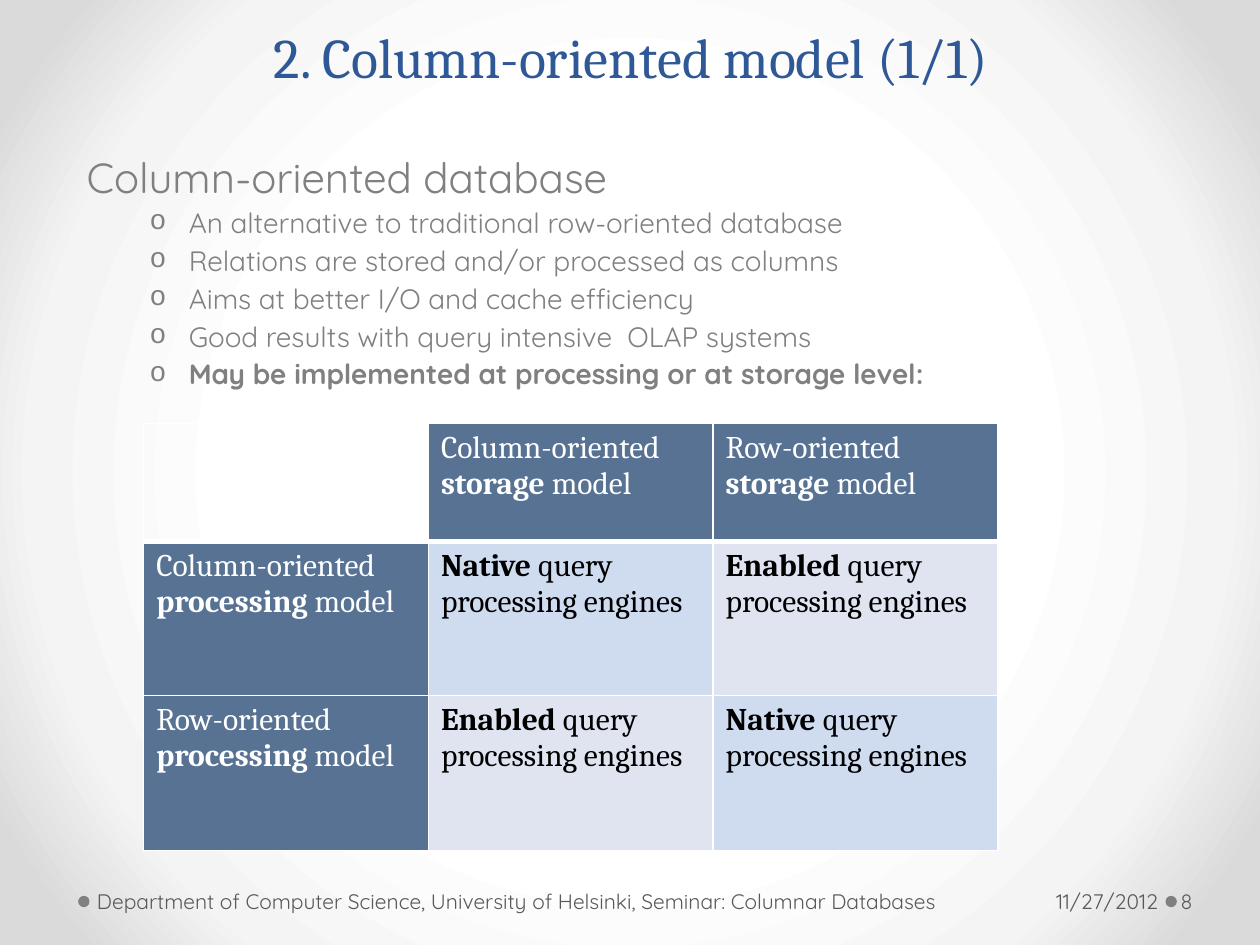
import pptx
import pptx.dml.color
import pptx.enum.shapes
import pptx.enum.text
import pptx.oxml
import pptx.oxml.ns
import pptx.util
from dataclasses import dataclass
from lxml import etree

Inches = pptx.util.Inches
Pt = pptx.util.Pt
Align = pptx.enum.text.PP_ALIGN
Anchor = pptx.enum.text.MSO_ANCHOR
qn = pptx.oxml.ns.qn


@dataclass
class Theme:
    serif: str = "Cambria"
    sans: str = "Quicksand"
    bullet_font: str = "Courier New"
    title: str = "2F5897"
    body: str = "808080"
    footer: str = "595959"
    white: str = "FFFFFF"
    black: str = "000000"
    header: str = "577293"
    native: str = "CFDCF0"
    enabled: str = "DFE4F0"
    backdrop: tuple = ((50, "FFFFFF"), (76, "F4F4F4"), (92, "DADADA"))
    title_size: int = 32
    heading_size: int = 24
    table_size: int = 18
    bullet_size: int = 16
    footer_size: int = 12


def rgb(color):
    return pptx.dml.color.RGBColor.from_string(color)


def add_xml(parent, tag, **attributes):
    return etree.SubElement(parent, qn(tag), **attributes)


class SlideBuilder:
    def __init__(self, page, theme):
        self.page = page
        self.theme = theme

    def background(self):
        self.page.background.fill.gradient()
        gradient = self.page.element.find(".//" + qn("a:gradFill"))
        for child in list(gradient):
            gradient.remove(child)
        stops = add_xml(gradient, "a:gsLst")
        for position, color in self.theme.backdrop:
            stop = add_xml(stops, "a:gs", pos=str(position * 1000))
            add_xml(stop, "a:srgbClr", val=color)
        circle = add_xml(gradient, "a:path", path="circle")
        add_xml(circle, "a:fillToRect", l="50000", t="50000", r="50000", b="50000")

    def dot(self, left, top, size):
        shape = self.page.shapes.add_shape(
            pptx.enum.shapes.MSO_SHAPE.OVAL,
            Inches(left), Inches(top), Inches(size), Inches(size))
        shape.shadow.inherit = False
        shape.fill.solid()
        shape.fill.fore_color.rgb = rgb(self.theme.body)
        shape.line.fill.background()

    def set_text(self, para, text, font, size, color):
        """Fill a paragraph; parts between ** marks are bold."""
        pieces = text.split("**")
        para.text = ""
        for index, piece in enumerate(pieces):
            if piece:
                span = para.add_run()
                span.text = piece
                span.font.name = font
                span.font.size = Pt(size)
                span.font.color.rgb = rgb(color)
                span.font.bold = index % 2 == 1

    def text_box(self, left, top, width, height, anchor=Anchor.TOP,
                 margins=(0.1, 0.05, 0.1, 0.05)):
        box = self.page.shapes.add_textbox(
            Inches(left), Inches(top), Inches(width), Inches(height))
        frame = box.text_frame
        frame.word_wrap = True
        frame.vertical_anchor = anchor
        (frame.margin_left, frame.margin_top,
         frame.margin_right, frame.margin_bottom) = map(Inches, margins)
        return frame

    def title(self, text):
        para = self.text_box(0.51, 0.13, 9, 0.63, Anchor.BOTTOM).paragraphs[0]
        self.set_text(para, text, self.theme.serif, self.theme.title_size, self.theme.title)
        para.alignment = Align.CENTER
        para.line_spacing = Pt(58)

    def footer(self, text, left, width, pads, align=Align.LEFT):
        frame = self.text_box(left, 6.95, width, 0.4, Anchor.MIDDLE,
                              (pads[0], 0.05, pads[1], 0.05))
        para = frame.paragraphs[0]
        self.set_text(para, text, self.theme.sans, self.theme.footer_size, self.theme.footer)
        para.alignment = align

    def bullet_list(self, heading, items):
        theme = self.theme
        frame = self.text_box(0.59, 1.15, 9.3, 2.16)
        para = frame.paragraphs[0]
        self.set_text(para, heading, theme.sans, theme.heading_size, theme.body)
        para.space_before = Pt(4.8)
        for item in items:
            para = frame.add_paragraph()
            self.set_text(para, item, theme.sans, theme.bullet_size, theme.body)
            para.level = 1
            para.space_before = Pt(2.4)
            properties = para._p.get_or_add_pPr()
            properties.set("marL", str(Inches(0.81)))
            properties.set("indent", str(Inches(-0.31)))
            add_xml(properties, "a:buFont", typeface=theme.bullet_font)
            add_xml(properties, "a:buChar", char="o")

    def borders(self, cell, top, bottom):
        properties = cell._tc.get_or_add_tcPr()
        sides = (("a:lnL", 1), ("a:lnR", 1), ("a:lnT", top), ("a:lnB", bottom))
        for index, (tag, width) in enumerate(sides):
            line = etree.Element(qn(tag), w=str(Pt(width)))
            add_xml(add_xml(line, "a:solidFill"), "a:srgbClr", val=self.theme.white)
            properties.insert(index, line)

    def table(self, rows, left, top, column_width, row_heights):
        theme = self.theme
        columns = len(rows[0])
        grid = self.page.shapes.add_table(
            len(rows), columns, Inches(left), Inches(top),
            Inches(column_width * columns), Inches(sum(row_heights))).table
        for column in grid.columns:
            column.width = Inches(column_width)
        for row_index, texts in enumerate(rows):
            grid.rows[row_index].height = Inches(row_heights[row_index])
            for column_index, text in enumerate(texts):
                cell = grid.cell(row_index, column_index)
                is_header = row_index == 0 or column_index == 0
                if not text:
                    cell.fill.background()
                else:
                    matching = theme.native if row_index == column_index else theme.enabled
                    cell.fill.solid()
                    cell.fill.fore_color.rgb = rgb(theme.header if is_header else matching)
                    cell.text_frame.text = text
                    for para in cell.text_frame.paragraphs:
                        self.set_text(para, para.text, theme.serif, theme.table_size,
                                      theme.white if is_header else theme.black)
                # The header row is set off by a thick line
                self.borders(cell, 3 if row_index == 1 else 1, 3 if row_index == 0 else 1)


def main():
    deck = pptx.Presentation()
    deck.slide_width, deck.slide_height = Inches(10), Inches(7.5)
    page = deck.slides.add_slide(deck.slide_layouts[6])
    builder = SlideBuilder(page, Theme())

    # Backdrop and footer dots
    builder.background()
    for left in (9.25, 0.62):
        builder.dot(left, 7.11, 0.09)

    # Title and footer
    builder.title("2. Column-oriented model (1/1)")
    builder.footer("11/27/2012", 7.99, 1.25, (0.1, 0.05), Align.RIGHT)
    builder.footer("Department of Computer Science, University of Helsinki, "
                   "Seminar: Columnar Databases", 0.72, 7.27, (0.05, 0.1))
    builder.footer("8", 9.34, 0.61, (0.03, 0.05))

    # Key points
    builder.bullet_list("Column-oriented database", [
        "An alternative to traditional row-oriented database",
        "Relations are stored and/or processed as columns",
        "Aims at better I/O and cache efficiency",
        "Good results with query intensive  OLAP systems",
        "**May be implemented at processing or at storage level:**",
    ])

    # Storage model against processing model
    native = "**Native** query processing engines"
    enabled = "**Enabled** query processing engines"
    builder.table([
        ["", "Column-oriented\n**storage** model", "Row-oriented **storage** model"],
        ["Column-oriented **processing** model", native, enabled],
        ["Row-oriented **processing** model", enabled, native],
    ], 1.14, 3.36, 2.26, (0.94, 1.22, 1.23))

    deck.save("out.pptx")


if __name__ == "__main__":
    main()
